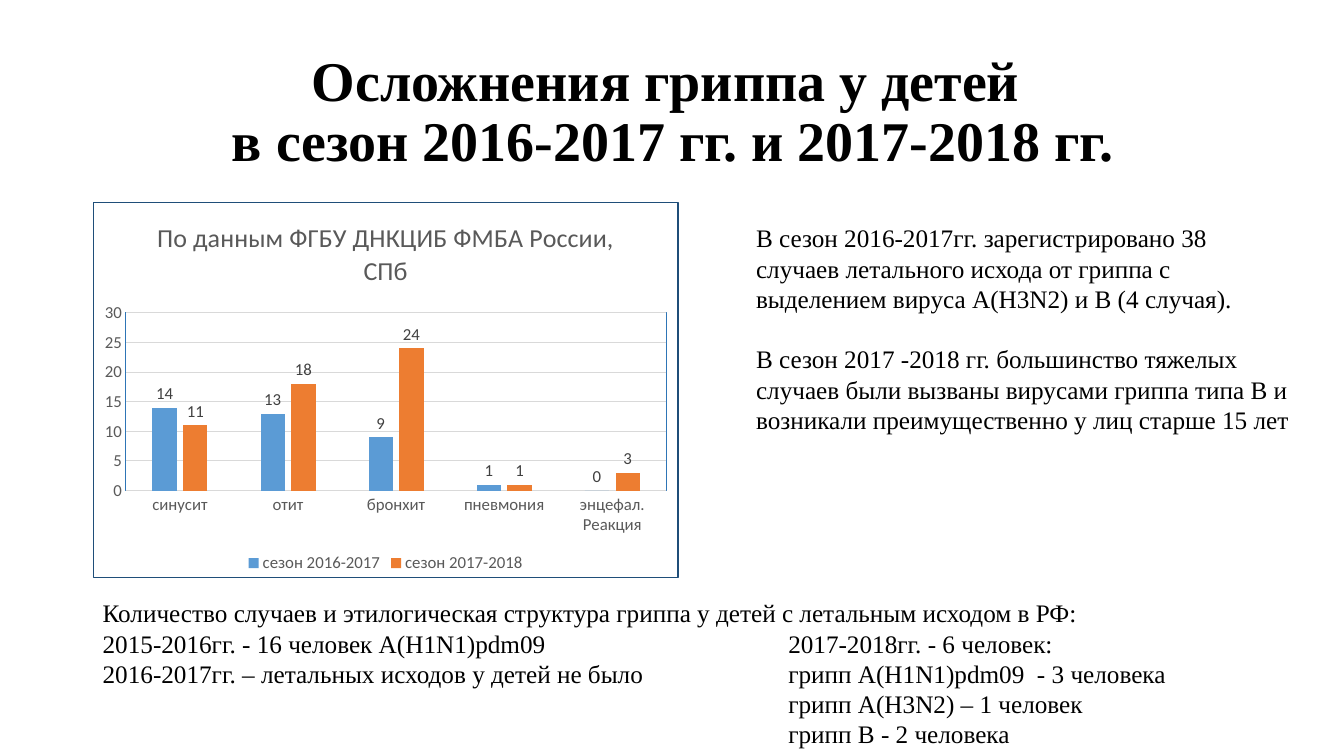
from pptx import Presentation
from pptx.chart.data import CategoryChartData
from pptx.dml.color import RGBColor
from pptx.enum.chart import (XL_CHART_TYPE, XL_LABEL_POSITION,
                             XL_LEGEND_POSITION, XL_TICK_MARK)
from pptx.enum.text import MSO_ANCHOR, MSO_AUTO_SIZE, PP_ALIGN
from pptx.oxml import parse_xml
from pptx.oxml.ns import nsdecls
from pptx.util import Inches, Pt

BLACK = RGBColor(0x00, 0x00, 0x00)
GREY = RGBColor(0x59, 0x59, 0x59)
DARK = RGBColor(0x40, 0x40, 0x40)
PALE = RGBColor(0xD9, 0xD9, 0xD9)
BLUE = RGBColor(0x5B, 0x9B, 0xD5)
ORANGE = RGBColor(0xED, 0x7D, 0x31)
NAVY = RGBColor(0x1F, 0x4E, 0x79)
AZURE = RGBColor(0x2E, 0x75, 0xB6)
SERIF, SANS = "Times New Roman", "Calibri"

TITLE = ["Осложнения гриппа у детей \vв сезон 2016-2017 гг. и 2017-2018 гг."]
SEASONS = [
    "В сезон 2016-2017гг. зарегистрировано 38 случаев летального исхода "
    "от гриппа с выделением вируса А(Н3N2) и В (4 случая).",
    "В сезон 2017 -2018 гг. большинство тяжелых случаев были вызваны "
    "вирусами гриппа типа В и возникали преимущественно у лиц старше 15 лет",
]
DEATHS = [
    "Количество случаев и этилогическая структура гриппа у детей "
    "с летальным исходом в РФ:",
    "2015-2016гг. - 16 человек А(Н1N1)pdm09\t2017-2018гг. - 6 человек:",
    "2016-2017гг. – летальных исходов у детей не было\t"
    "грипп А(Н1N1)pdm09  - 3 человека",
    "\tгрипп А(Н3N2) – 1 человек",
    "\tгрипп В - 2 человека",
]
CHART_TITLE = "По данным ФГБУ ДНКЦИБ ФМБА России, СПб"
CASES = ["синусит", "отит", "бронхит", "пневмония", "энцефал. Реакция"]
SERIES = [
    ("сезон 2016-2017", (14, 13, 9, 1, 0), BLUE),
    ("сезон 2017-2018", (11, 18, 24, 1, 3), ORANGE),
]
LEFT, WIDE = 0.92, 11.5


def set_font(font, size, color=GREY, name=SANS, bold=False):
    font.size, font.name, font.bold = Pt(size), name, bold
    font.color.rgb = color


def add_text(slide, box, lines, size=18, bold=False, align=PP_ALIGN.LEFT,
             anchor=MSO_ANCHOR.TOP, fit=MSO_AUTO_SIZE.SHAPE_TO_FIT_TEXT,
             gap=0, spacing=None, tab=None):
    """Add one paragraph per line; gap is in points, tab in inches."""
    frame = slide.shapes.add_textbox(*map(Inches, box)).text_frame
    frame.word_wrap, frame.auto_size = True, fit
    frame.vertical_anchor = anchor
    for i, line in enumerate(lines):
        para = frame.add_paragraph() if i else frame.paragraphs[0]
        para.text, para.alignment = line, align
        if i and gap:
            para.space_before = Pt(gap)
        if spacing:
            para.line_spacing = spacing
        if tab:
            para._p.get_or_add_pPr().append(parse_xml(
                f'<a:tabLst {nsdecls("a")}>'
                f'<a:tab pos="{Inches(tab)}" algn="l"/></a:tabLst>'))
        for run in para.runs:
            set_font(run.font, size, BLACK, SERIF, bold)


def outline(color):
    """Chart part format with a thin line and no fill."""
    return parse_xml(
        f'<c:spPr {nsdecls("c", "a")}><a:noFill/><a:ln w="{Pt(0.75)}">'
        f'<a:solidFill><a:srgbClr val="{color}"/></a:solidFill>'
        f'</a:ln></c:spPr>')


def add_bars(slide, box):
    data = CategoryChartData()
    data.categories = CASES
    for name, vals, _ in SERIES:
        data.add_series(name, vals)
    chart = slide.shapes.add_chart(
        XL_CHART_TYPE.COLUMN_CLUSTERED, *map(Inches, box), data).chart
    set_font(chart.font, 10, BLACK)

    chart.has_title = True
    head = chart.chart_title
    head.include_in_layout = False
    head.text_frame.text = CHART_TITLE
    set_font(head.text_frame.paragraphs[0].runs[0].font, 18.6)

    chart.has_legend = True
    chart.legend.position = XL_LEGEND_POSITION.BOTTOM
    chart.legend.include_in_layout = False
    set_font(chart.legend.font, 12)

    for axis in (chart.category_axis, chart.value_axis):
        axis.major_tick_mark = axis.minor_tick_mark = XL_TICK_MARK.NONE
        set_font(axis.tick_labels.font, 12)
    grid = chart.value_axis.major_gridlines.format.line
    for line in (chart.category_axis.format.line, grid):
        line.color.rgb, line.width = PALE, Pt(0.75)
    chart.value_axis.format.line.fill.background()

    plot = chart.plots[0]
    plot.gap_width, plot.overlap = 219, -27
    plot.vary_by_categories = False
    for bars, (_, _, color) in zip(plot.series, SERIES):
        bars.format.fill.solid()
        bars.format.fill.fore_color.rgb = color
        labels = bars.data_labels
        labels.show_value = True
        labels.position = XL_LABEL_POSITION.OUTSIDE_END
        set_font(labels.font, 12, DARK)

    root = chart._chartSpace.chart
    root.plotArea.append(outline(AZURE))
    root.addnext(outline(NAVY))


def main():
    prs = Presentation()
    prs.slide_width, prs.slide_height = Inches(13.33), Inches(7.5)
    slide = prs.slides.add_slide(prs.slide_layouts[6])
    add_text(slide, (LEFT, 0.4, WIDE, 1.45), TITLE, size=40, bold=True,
             align=PP_ALIGN.CENTER, anchor=MSO_ANCHOR.MIDDLE,
             fit=MSO_AUTO_SIZE.NONE, spacing=0.9)
    add_bars(slide, (LEFT, 2, 5.81, 3.73))
    add_text(slide, (7.4, 2.16, 5.49, 2.22), SEASONS, gap=21.6)
    add_text(slide, (LEFT, 5.88, WIDE, 1.62), DEATHS, tab=6.8)
    prs.save("out.pptx")


if __name__ == "__main__":
    main()
